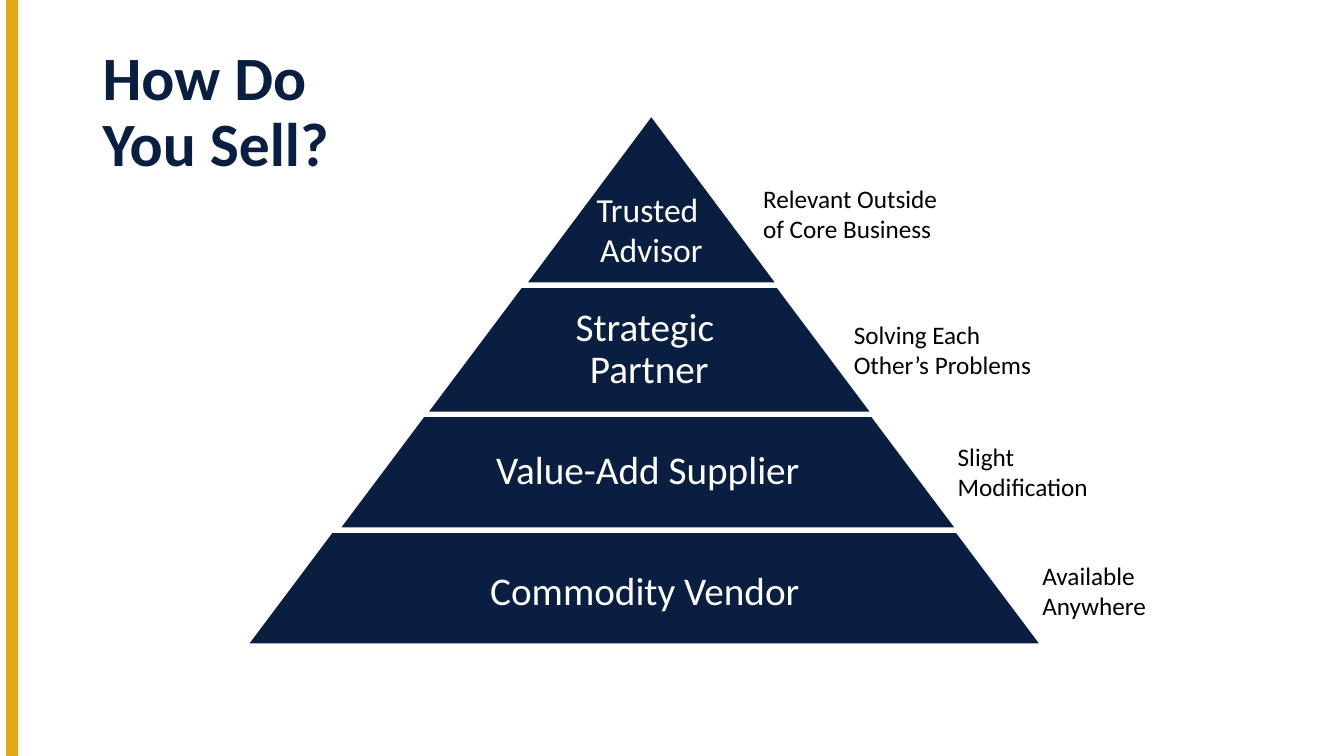
from pptx import Presentation
from pptx.dml.color import RGBColor
from pptx.enum.shapes import MSO_CONNECTOR as Connector, MSO_SHAPE as Shape
from pptx.enum.text import MSO_ANCHOR as Anchor, PP_ALIGN as Align
from pptx.util import Emu, Pt
from lxml.etree import SubElement
from pptx.oxml.ns import qn

EMU_PER_PX = 9144
COLORS = {"navy": "091E40", "gold": "E6A714", "white": "FFFFFF", "black": "000000"}
FORMATS = {
    "title": {"size": Pt(44), "bold": True, "color": "navy"},
    "tier": {"size": Pt(28), "color": "white"},
    "peak": {"size": Pt(24), "color": "white"},
    "label": {"size": Pt(18), "color": "black"},
}
TIERS = [
    ((246, 528, 786, 111), (384, 533, 511, 111), "Commodity Vendor"),
    ((337, 413, 611, 111), (444, 413, 397, 111), "Value-Add Supplier"),
    ((424, 285, 440, 124), (501, 285, 286, 124), "Strategic \vPartner"),
]
PEAK = (522, 115, 248, 166)
PEAK_TEXT = (522, 144, 248, 166)
LABELS = [
    ((1024, 551, 136, 71), "Available Anywhere"),
    ((940, 433, 168, 71), "Slight Modification"),
    ((837, 312, 214, 71), "Solving Each Other’s Problems"),
    ((747, 177, 208, 71), "Relevant Outside of Core Business"),
]


def px(value):
    return Emu(value * EMU_PER_PX)


def rgb(name):
    return RGBColor.from_string(COLORS[name])


class SlideBuilder:
    def __init__(self, slide, font_name):
        self.slide = slide
        self.font_name = font_name

    def rule(self, start, end, color, width):
        line = self.slide.shapes.add_connector(Connector.STRAIGHT, *map(px, start + end))
        line.line.color.rgb = rgb(color)
        line.line.width = Pt(width)
        SubElement(line._element.spPr, qn("a:effectLst"))

    def trapezoid(self, box):
        shape = self.slide.shapes.add_shape(Shape.TRAPEZOID, *map(px, box))
        shape.adjustments[0] = 0.75
        shape.shadow.inherit = False
        shape.fill.solid()
        shape.fill.fore_color.rgb = rgb("navy")
        shape.line.color.rgb = rgb("white")
        shape.line.width = Pt(1)

    def text(self, box, content, style, align=Align.LEFT, anchor=Anchor.TOP,
             spacing=1.0, inset=None):
        frame = self.slide.shapes.add_textbox(*map(px, box)).text_frame
        frame.word_wrap = True
        frame.vertical_anchor = anchor
        if inset is not None:
            for side in ("left", "top", "right", "bottom"):
                setattr(frame, f"margin_{side}", px(inset))
        frame.text = content
        for paragraph in frame.paragraphs:
            paragraph.alignment = align
            paragraph.line_spacing = spacing
            for run in paragraph.runs:
                self.format(run.font, FORMATS[style])

    def format(self, font, values):
        font.name = self.font_name
        for name, value in values.items():
            if name == "color":
                font.color.rgb = rgb(value)
            else:
                setattr(font, name, value)


def main():
    presentation = Presentation()
    presentation.slide_width, presentation.slide_height = px(1333), px(750)
    slide = presentation.slides.add_slide(presentation.slide_layouts[6])
    builder = SlideBuilder(slide, "Calibri")
    builder.rule((12, 0), (12, 750), "gold", 8)
    builder.text((92, 40, 1150, 145), "How Do\vYou Sell?", "title",
                 anchor=Anchor.MIDDLE, spacing=0.9)
    for band, text_box, name in TIERS:
        builder.trapezoid(band)
        builder.text(text_box, name, "tier", Align.CENTER, Anchor.MIDDLE, 0.9, 5)
    builder.trapezoid(PEAK)
    builder.text(PEAK_TEXT, "Trusted \nAdvisor", "peak", Align.CENTER, Anchor.MIDDLE, inset=8)
    for box, label in LABELS:
        builder.text(box, label, "label")
    presentation.save("out.pptx")


if __name__ == "__main__":
    main()
